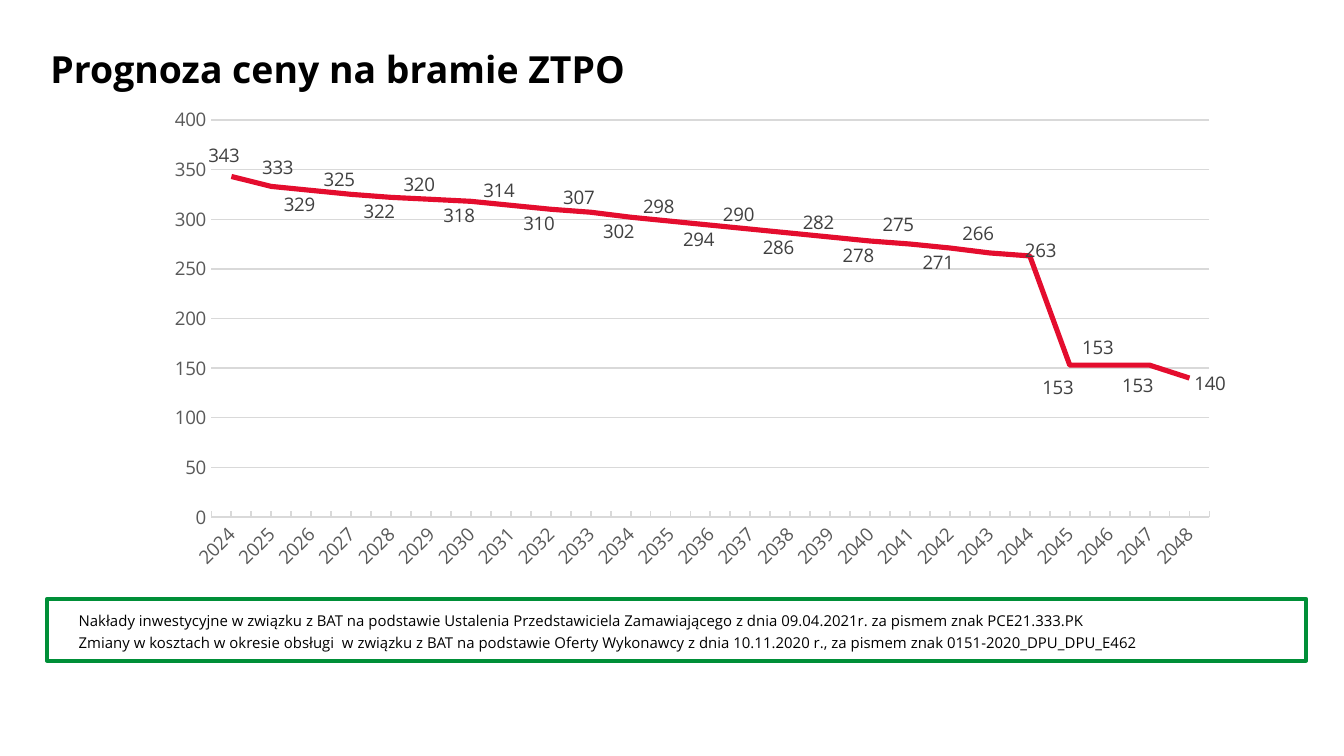
from lxml import etree
from pptx import Presentation
from pptx import util as u
from pptx.chart.data import CategoryChartData
from pptx.dml.color import RGBColor
from pptx.enum import chart as ch, shapes, text
from pptx.oxml import ns

THEME = dict(font="Open Sans", ink="000000", axis="595959", label="404040", grid="D9D9D9",
             line="E40D2E", frame="008F38", paper="FFFFFF", title=20, chart=10, note=8)


def put_text(tf, words, size, bold=False, align=None, anchor=None):
    tf.word_wrap = True
    if anchor is not None:
        tf.vertical_anchor = anchor
    p = tf.paragraphs[0]
    p.alignment = align
    r = p.add_run()
    r.text = words
    style(r.font, size, THEME["ink"], bold)


def style(font, size, color, bold=False):
    font.name, font.size, font.bold = THEME["font"], u.Pt(size), bold
    font.color.rgb = RGBColor.from_string(color)


prs = Presentation()
prs.slide_width = u.Inches(10)
prs.slide_height = prs.slide_width * 9 // 16
W, H = prs.slide_width / 100, prs.slide_height / 100
s = prs.slides.add_slide(prs.slide_layouts[5])

sp = s.shapes.title
sp.left, sp.top, sp.width, sp.height = int(2.75 * W), int(5.16 * H), int(90 * W), int(9.43 * H)
put_text(sp.text_frame, "Prognoza ceny na bramie ZTPO", THEME["title"], bold=True,
         align=text.PP_ALIGN.JUSTIFY, anchor=text.MSO_ANCHOR.TOP)

prices = [343, 333, 329, 325, 322, 320, 318, 314, 310, 307, 302, 298, 294,
          290, 286, 282, 278, 275, 271, 266, 263, 153, 153, 153, 140]
cd = CategoryChartData()
cd.categories = [str(2024 + i) for i in range(len(prices))]
for n, values in enumerate(([0], [0], prices, [0]), 1):
    cd.add_series(f"Series {n}", values)
chart = s.shapes.add_chart(ch.XL_CHART_TYPE.LINE_STACKED, int(11.4 * W), int(13 * H),
                           int(80.2 * W), int(63.7 * H), cd).chart
chart.has_legend = chart.has_title = False
style(chart.font, THEME["chart"], THEME["axis"])

cat, val = chart.category_axis, chart.value_axis
for ax in (cat, val):
    style(ax.tick_labels.font, THEME["chart"], THEME["axis"])
    ax.major_tick_mark = ax.minor_tick_mark = ch.XL_TICK_MARK.NONE
cat.minor_tick_mark = ch.XL_TICK_MARK.INSIDE
val.minimum_scale, val.maximum_scale, val.major_unit = 0, 400, 50
val.format.line.fill.background()
for line, width in ((cat.format.line, 1), (val.major_gridlines.format.line, 0.75)):
    line.color.rgb = RGBColor.from_string(THEME["grid"])
    line.width = u.Pt(width)
cat._element.find(ns.qn("c:txPr")).find(ns.qn("a:bodyPr")).set("rot", "-2700000")

for series, color in zip(chart.plots[0].series, ("4F81BD", "C0504D", THEME["line"], "4BACC6")):
    series.smooth = False
    series.marker.style = ch.XL_MARKER_STYLE.NONE
    series.format.line.color.rgb = RGBColor.from_string(color)
    series.format.line.width = u.Pt(2.75)

series = chart.plots[0].series[2]
style(series.data_labels.font, THEME["chart"], THEME["label"])
series.data_labels.show_value = True
series.data_labels.position = ch.XL_LABEL_POSITION.CENTER
layouts = []
moved = {0: (-0.7, -4.3), 1: (0.6, -3.9), 17: (-1.1, -4), 19: (-1.1, -4.1), 20: (1, -1.2),
         21: (-1.1, 4.7), 22: (-1.1, -3.6), 23: (-1.1, 4.3), 24: (1.9, 1.2)}
for i in range(len(prices)):
    label = series.points[i].data_label
    style(label.font, THEME["chart"], THEME["label"])
    label.position = ch.XL_LABEL_POSITION.CENTER
    dx, dy = moved.get(i, (-1.1, -3 if i % 2 else 3))
    layout = etree.Element(ns.qn("c:layout"))
    series.data_labels._element.findall(ns.qn("c:dLbl"))[i].insert(1, layout)
    layouts.append((layout, dict(x=dx / 100, y=dy / 100)))

area = chart._chartSpace.chart.plotArea
for old in area.findall(ns.qn("c:layout")):
    area.remove(old)
layout = etree.Element(ns.qn("c:layout"))
area.insert(0, layout)
layouts.append((layout, dict(layoutTarget="inner", xMode="edge", yMode="edge",
                             x=5.4 / 100, y=4.5 / 100, w=92.6 / 100, h=82.5 / 100)))
for layout, parts in layouts:
    manual = etree.SubElement(layout, ns.qn("c:manualLayout"))
    for tag, value in parts.items():
        etree.SubElement(manual, ns.qn("c:" + tag)).set("val", str(value))

notes = ["Nakłady inwestycyjne w związku z BAT na podstawie Ustalenia Przedstawiciela "
         "Zamawiającego z dnia 09.04.2021r. za pismem znak PCE21.333.PK",
         "Zmiany w kosztach w okresie obsługi  w związku z BAT na podstawie Oferty Wykonawcy "
         "z dnia 10.11.2020 r., za pismem znak 0151-2020_DPU_DPU_E462"]
tbl = s.shapes.add_table(2, 3, int(5.75 * W), int(80.6 * H), int(91.5 * W), int(5.7 * H)).table
tbl.first_row = tbl.horz_banding = False
for col, share in zip(tbl.columns, (81.3, 5.1, 5.1)):
    col.width = int(share * W)
tbl.cell(1, 0).merge(tbl.cell(1, 2))
for row, note in zip(tbl.rows, notes):
    for c, cell in enumerate(row.cells):
        cell.fill.solid()
        cell.fill.fore_color.rgb = RGBColor.from_string(THEME["paper"])
        cell.margin_left = cell.margin_right = cell.margin_top = u.Inches(0.01)
        cell.margin_bottom = 0
        cell.vertical_anchor = text.MSO_ANCHOR.BOTTOM
        if c:
            end = etree.SubElement(cell.text_frame.paragraphs[0]._p, ns.qn("a:endParaRPr"))
            end.set("sz", str(THEME["note"] * 100))
        else:
            put_text(cell.text_frame, note, THEME["note"])

sp = s.shapes.add_shape(shapes.MSO_SHAPE.RECTANGLE, int(3.5 * W), int(79.2 * H),
                        int(93.7 * W), int(8.2 * H))
sp.shadow.inherit = False
sp.fill.background()
sp.line.color.rgb = RGBColor.from_string(THEME["frame"])
sp.line.width = u.Pt(2)

prs.save("out.pptx")
